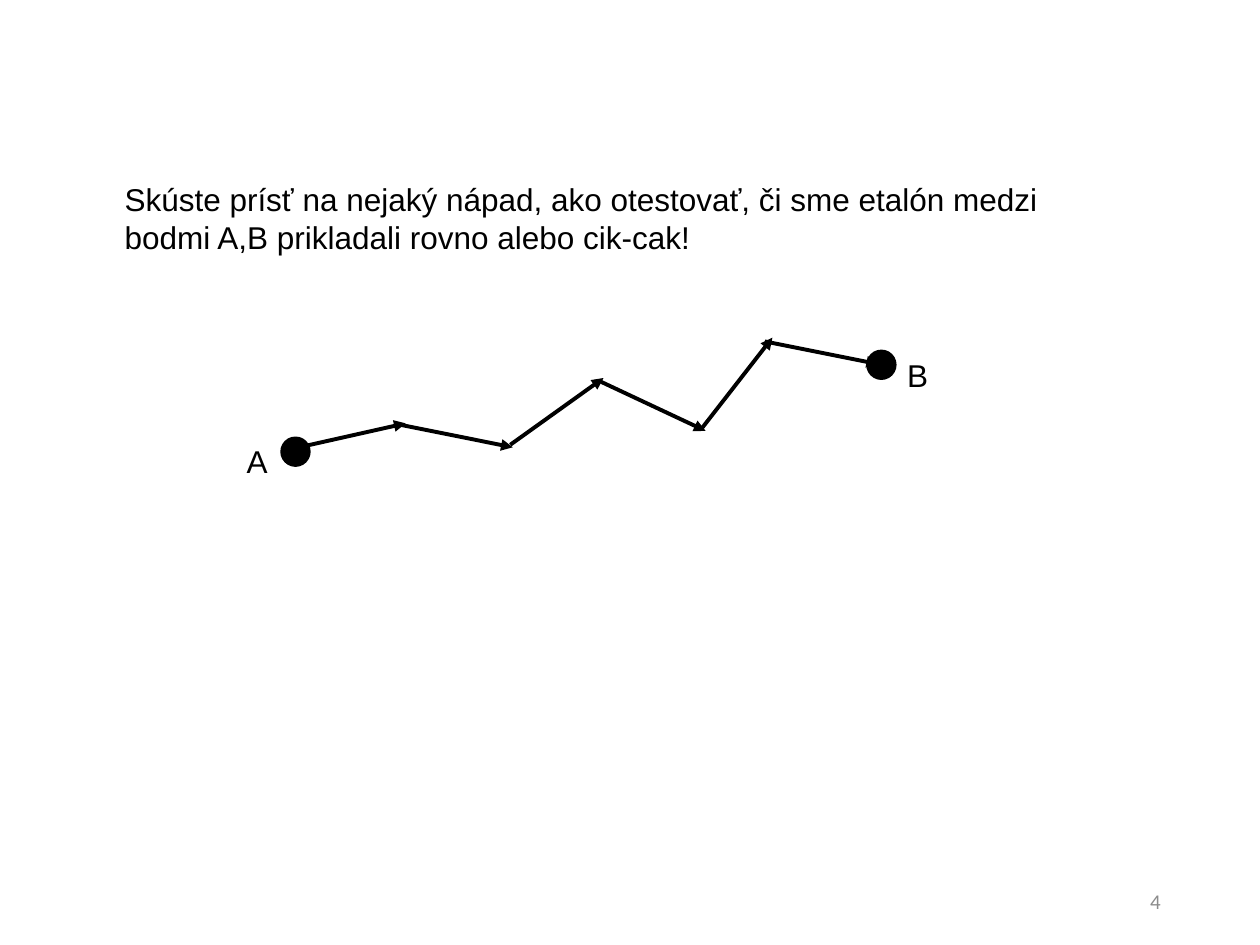
from lxml import etree
from pptx import Presentation
from pptx import util as u
from pptx.dml.color import RGBColor
from pptx.enum import shapes, text
from pptx.oxml.ns import qn

BLACK = "000000"


def color(value):
    return RGBColor.from_string(value)


def add_text(slide, box, words, font="Arial", size=18, ink=BLACK):
    shape = slide.shapes.add_textbox(*map(u.Inches, box))
    shape.text_frame.word_wrap = True
    paragraph = shape.text_frame.paragraphs[0]
    paragraph.text = words
    paragraph.font.name = font
    paragraph.font.size = u.Pt(size)
    paragraph.font.color.rgb = color(ink)
    return shape


presentation = Presentation()
presentation.slide_width = u.Inches(10)
presentation.slide_height = u.Inches(7.5)
slide = presentation.slides.add_slide(presentation.slide_layouts[6])

add_text(
    slide,
    (0.89, 1.38, 7.95, 0.71),
    "Skúste prísť na nejaký nápad, ako otestovať, či sme etalón medzi "
    "bodmi A,B prikladali rovno alebo cik-cak!",
)

# Zigzag steps from A to B: start x, start y, end x, end y
steps = [
    (2.33, 3.56, 3.22, 3.36),
    (3.17, 3.37, 4.07, 3.55),
    (4.05, 3.53, 4.79, 3.00),
    (4.77, 3.03, 5.60, 3.42),
    (5.57, 3.40, 6.13, 2.68),
    (6.07, 2.71, 6.97, 2.89),
]
for step in steps:
    arrow = slide.shapes.add_connector(
        shapes.MSO_CONNECTOR.STRAIGHT, *map(u.Inches, step)
    )
    arrow.line.color.rgb = color(BLACK)
    arrow.line.width = u.Pt(2.25)
    etree.SubElement(arrow.line._get_or_add_ln(), qn("a:tailEnd"), type="triangle")
    etree.SubElement(arrow._element.spPr, qn("a:effectLst"))

# Each point: label, dot left and top, label left and top
points = [("A", 2.24, 3.48, 1.86, 3.46), ("B", 6.89, 2.79, 7.1, 2.78)]
for label, dot_left, dot_top, label_left, label_top in points:
    dot = slide.shapes.add_shape(
        shapes.MSO_SHAPE.OVAL, *map(u.Inches, (dot_left, dot_top, 0.21, 0.21))
    )
    dot.shadow.inherit = False
    dot.fill.solid()
    dot.fill.fore_color.rgb = color(BLACK)
    dot.line.color.rgb = color(BLACK)
    dot.line.width = u.Pt(2.25)
    add_text(slide, (label_left, label_top, 0.39, 0.4), label)

page_number = add_text(slide, (7.06, 6.95, 2.25, 0.4), "4", "Calibri", 12, "8C8C8C")
page_number.text_frame.vertical_anchor = text.MSO_ANCHOR.MIDDLE
page_number.text_frame.paragraphs[0].alignment = text.PP_ALIGN.RIGHT

presentation.save("out.pptx")
